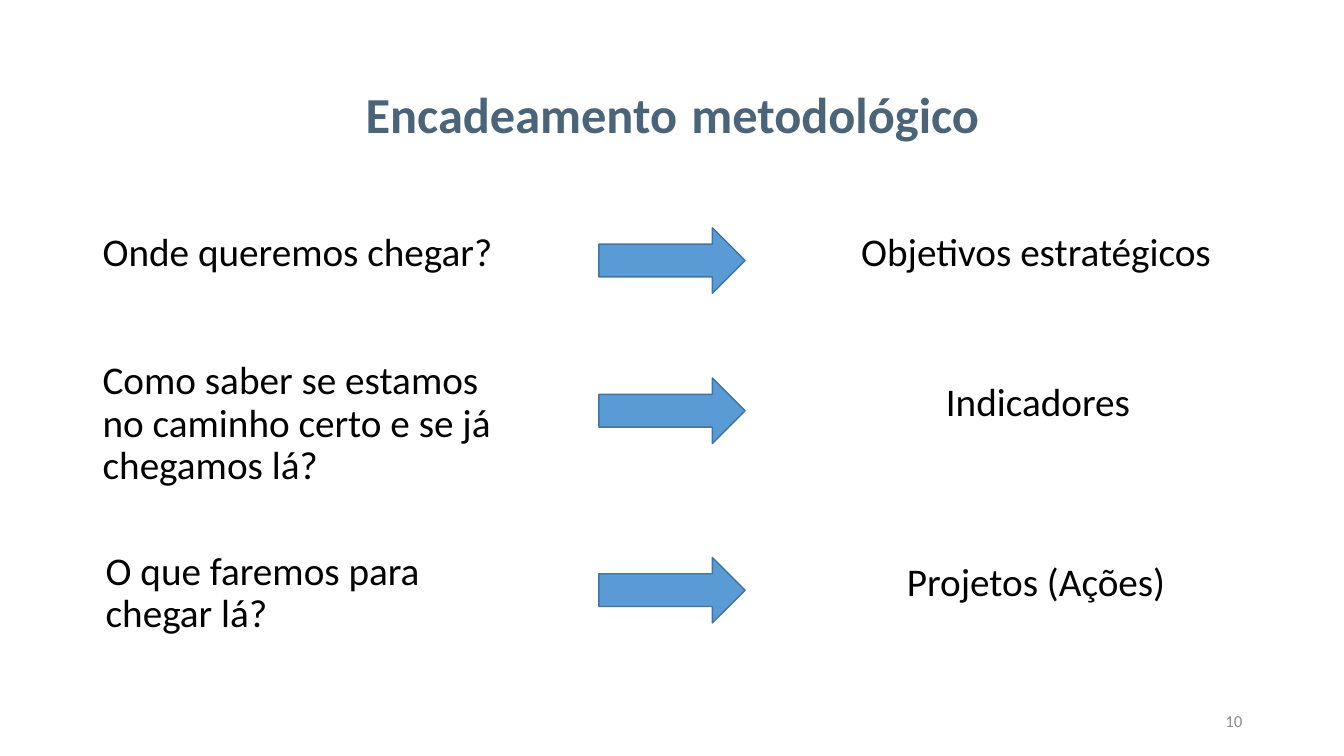
"""Build the slide that links each planning question to its planning instrument."""
from dataclasses import dataclass
from typing import Any

import pptx
import pptx.dml.color
import pptx.enum.shapes
import pptx.enum.text
import pptx.presentation
import pptx.slide
import pptx.util

Inches = pptx.util.Inches
Pt = pptx.util.Pt
Align = pptx.enum.text.PP_ALIGN
Anchor = pptx.enum.text.MSO_ANCHOR


@dataclass(frozen=True)
class Theme:
    """Colours, font and type sizes of the slide."""
    font: str = "Calibri"
    title: str = "4B6478"
    body: str = "000000"
    number: str = "8C8C8C"
    arrow_fill: str = "5B9BD5"
    arrow_line: str = "43739E"
    title_size: int = 36
    gap_size: int = 44
    body_size: int = 28
    number_size: int = 12


@dataclass(frozen=True)
class Box:
    """Position and size in inches."""
    left: float
    top: float
    width: float
    height: float

    def lengths(self) -> list[pptx.util.Length]:
        """Return the four values as lengths."""
        return [Inches(v) for v in (self.left, self.top, self.width, self.height)]


@dataclass(frozen=True)
class Words:
    """A stretch of text with one look."""
    text: str
    size: int
    color: str
    bold: bool = False


@dataclass(frozen=True)
class Link:
    """A question and the instrument that answers it."""
    question: str
    question_left: float
    question_top: float
    instrument: str
    instrument_left: float
    top: float


THEME = Theme()
LINKS = [
    Link("Onde queremos chegar?", 0.92, 2.26, "Objetivos estratégicos", 8.14, 2.26),
    Link("Como saber se estamos no caminho certo e se já chegamos lá?",
         0.92, 3.53, "Indicadores", 8.16, 3.75),
    Link("O que faremos para chegar lá?", 0.95, 5.42, "Projetos (Ações)", 8.14, 5.53),
]


def apply(target: Any, values: dict[str, Any]) -> None:
    """Set each named attribute on the target."""
    for name, value in values.items():
        setattr(target, name, value)


def rgb(code: str) -> pptx.dml.color.RGBColor:
    """Turn a hex code into a colour."""
    return pptx.dml.color.RGBColor.from_string(code)


def add_text(slide: pptx.slide.Slide, box: Box, words: list[Words], align: Align,
             anchor: Anchor = Anchor.TOP, line_spacing: float = 0.9) -> None:
    """Add a wrapped text box with one paragraph."""
    frame = slide.shapes.add_textbox(*box.lengths()).text_frame
    apply(frame, {"word_wrap": True, "vertical_anchor": anchor})
    paragraph = frame.paragraphs[0]
    apply(paragraph, {"alignment": align, "line_spacing": line_spacing})
    for part in words:
        run = paragraph.add_run()
        run.text = part.text
        apply(run.font, {"name": THEME.font, "size": Pt(part.size), "bold": part.bold})
        run.font.color.rgb = rgb(part.color)


def add_arrow(slide: pptx.slide.Slide, box: Box) -> None:
    """Add a block arrow pointing right."""
    arrow = slide.shapes.add_shape(
        pptx.enum.shapes.MSO_SHAPE.RIGHT_ARROW, *box.lengths())
    arrow.shadow.inherit = False
    arrow.fill.solid()
    arrow.fill.fore_color.rgb = rgb(THEME.arrow_fill)
    arrow.line.color.rgb = rgb(THEME.arrow_line)
    arrow.line.width = Pt(1)


def add_link(slide: pptx.slide.Slide, link: Link) -> None:
    """Add a question, its arrow and its instrument."""
    question = Words(link.question, THEME.body_size, THEME.body)
    instrument = Words(link.instrument, THEME.body_size, THEME.body)
    add_text(slide, Box(link.question_left, link.question_top, 4.27, 0.95),
             [question], Align.LEFT)
    add_arrow(slide, Box(5.94, link.top, 1.45, 0.65))
    add_text(slide, Box(link.instrument_left, link.top, 4.27, 0.65),
             [instrument], Align.CENTER)


def main() -> None:
    """Build and save the presentation."""
    deck: pptx.presentation.Presentation = pptx.Presentation()
    apply(deck, {"slide_width": Inches(13.33), "slide_height": Inches(7.5)})
    slide = deck.slides.add_slide(deck.slide_layouts[6])
    heading = [
        Words("Encadeamento", THEME.title_size, THEME.title, True),
        Words(" ", THEME.gap_size, THEME.body),
        Words("metodológico", THEME.title_size, THEME.title, True),
    ]
    add_text(slide, Box(0.92, 0.4, 11.5, 1.45), heading, Align.CENTER, Anchor.MIDDLE)
    for link in LINKS:
        add_link(slide, link)
    number = Words("10", THEME.number_size, THEME.number)
    add_text(slide, Box(9.42, 6.95, 3, 0.4), [number], Align.RIGHT, Anchor.MIDDLE, 1.0)
    deck.save("out.pptx")


if __name__ == "__main__":
    main()
